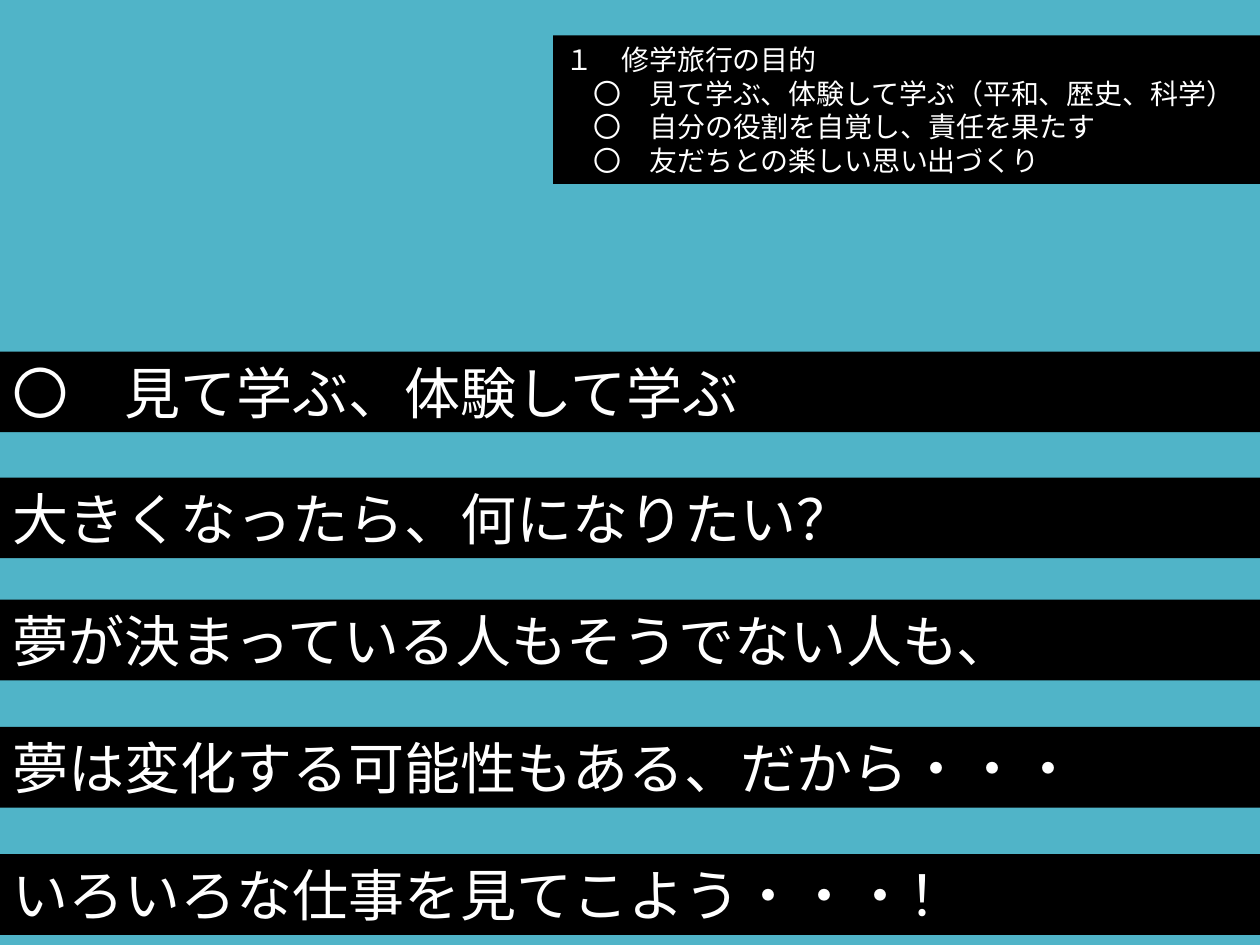
from dataclasses import dataclass

import pptx
import pptx.dml.color
import pptx.enum.shapes
import pptx.enum.text
import pptx.oxml.ns
import pptx.oxml.xmlchemy
import pptx.util
from pptx.util import Inches

FONT = "Noto Sans CJK JP"
BACKGROUND = "50B4C8"
BLACK = "000000"
WHITE = "FFFFFF"


@dataclass
class Band:
    left: float
    top: float
    width: float
    height: float
    size: int
    lines: list[str]


def paint(fill, color: str) -> None:
    fill.solid()
    fill.fore_color.rgb = pptx.dml.color.RGBColor.from_string(color)


def style_paragraph(p, size: int, indent: int) -> None:
    p.alignment = pptx.enum.text.PP_ALIGN.LEFT
    p.line_spacing = pptx.util.Pt(1.2 * size)
    p.font.size = pptx.util.Pt(size)
    paint(p.font.fill, WHITE)
    p.font.name = FONT
    pPr = p._p.get_or_add_pPr()
    pPr.set("marL", str(pptx.util.Pt(indent)))
    pPr.set("indent", "0")
    latin = pPr.find(".//" + pptx.oxml.ns.qn("a:latin"))
    ea = pptx.oxml.xmlchemy.OxmlElement("a:ea")
    ea.set("typeface", FONT)
    latin.addnext(ea)


def add_band(slide, band: Band) -> None:
    sp = slide.shapes.add_shape(
        pptx.enum.shapes.MSO_SHAPE.RECTANGLE,
        Inches(band.left), Inches(band.top), Inches(band.width), Inches(band.height),
    )
    sp.shadow.inherit = False
    paint(sp.fill, BLACK)
    sp.line.fill.background()
    tf = sp.text_frame
    tf.word_wrap = True
    tf.vertical_anchor = pptx.enum.text.MSO_ANCHOR.MIDDLE
    for i, line in enumerate(band.lines):
        p = tf.paragraphs[0] if i == 0 else tf.add_paragraph()
        p.add_run().text = line
        style_paragraph(p, band.size, band.size if i else 0)


PURPOSE = Band(4.39, 0.28, 5.61, 1.18, 16, [
    "１　修学旅行の目的",
    "〇　見て学ぶ、体験して学ぶ（平和、歴史、科学）",
    "〇　自分の役割を自覚し、責任を果たす",
    "〇　友だちとの楽しい思い出づくり",
])
MESSAGES = [
    (2.79, "〇　見て学ぶ、体験して学ぶ"),
    (3.79, "大きくなったら、何になりたい？"),
    (4.76, "夢が決まっている人もそうでない人も、"),
    (5.77, "夢は変化する可能性もある、だから・・・"),
    (6.78, "いろいろな仕事を見てこよう・・・！"),
]


def main() -> None:
    prs = pptx.Presentation()
    prs.slide_width = Inches(10)
    prs.slide_height = Inches(7.5)
    slide = prs.slides.add_slide(prs.slide_layouts[6])
    paint(slide.background.fill, BACKGROUND)
    add_band(slide, PURPOSE)
    for top, message in MESSAGES:
        add_band(slide, Band(0, top, 10, 0.64, 32, [message]))
    prs.save("out.pptx")


if __name__ == "__main__":
    main()
